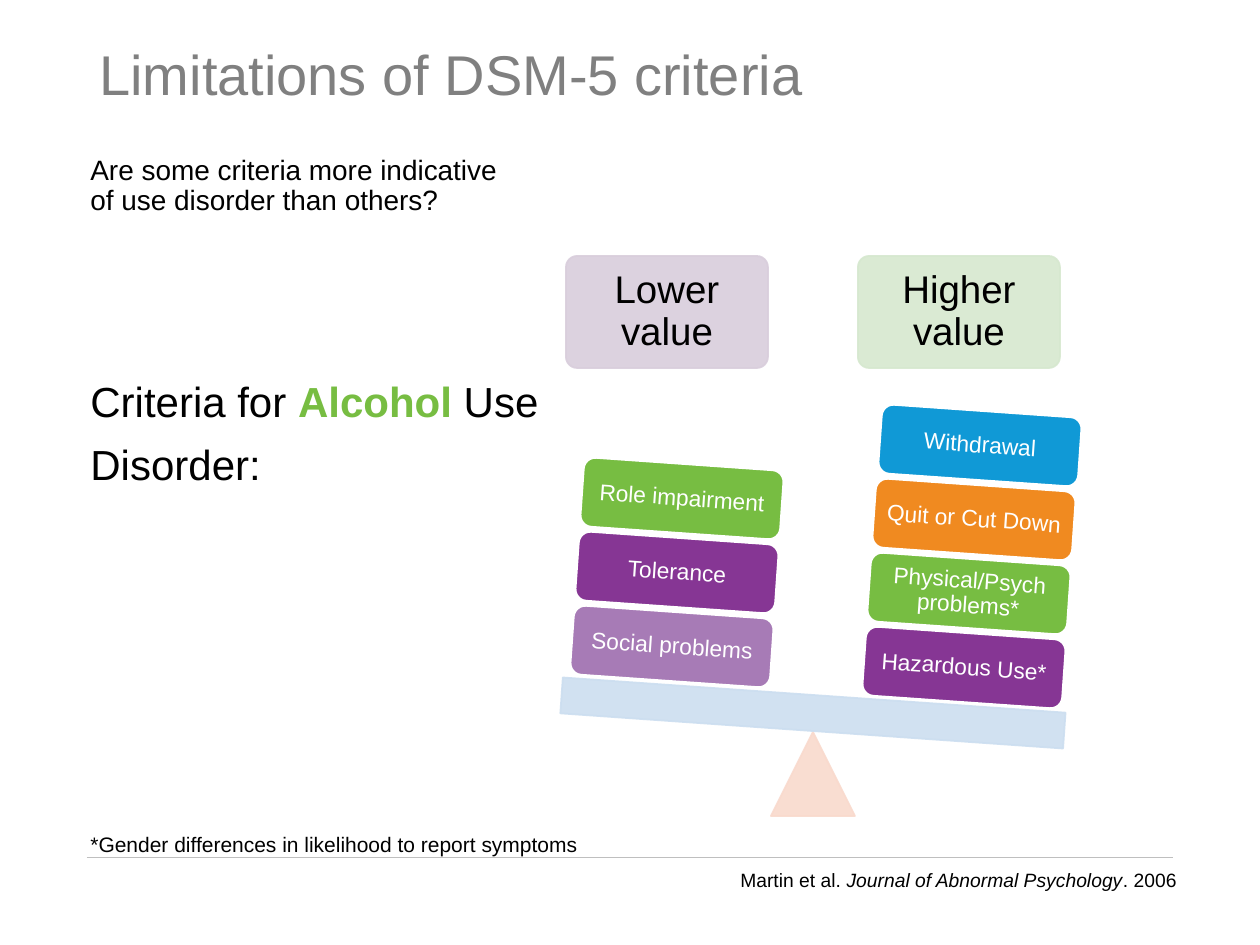
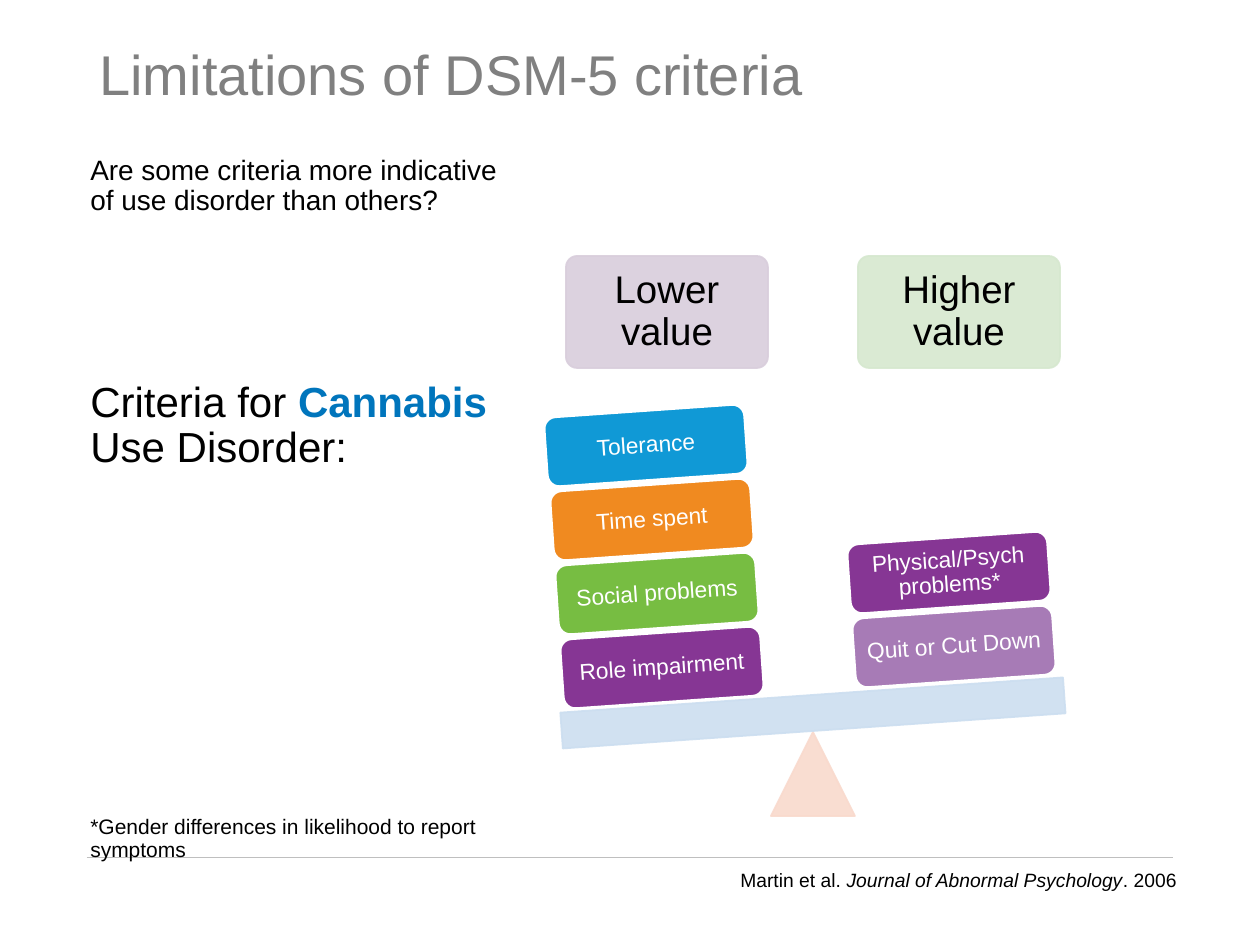
from math import radians, tan

from lxml.etree import SubElement
from pptx import Presentation
from pptx.dml.color import RGBColor
from pptx.enum.shapes import MSO_CONNECTOR, MSO_SHAPE
from pptx.enum.text import MSO_ANCHOR, PP_ALIGN
from pptx.oxml.ns import qn
from pptx.util import Emu, Pt

FONT = "Arial"
BLACK = RGBColor(0x00, 0x00, 0x00)
WHITE = RGBColor(0xFF, 0xFF, 0xFF)
GREY = RGBColor(0x80, 0x80, 0x80)
SILVER = RGBColor(0xBF, 0xBF, 0xBF)
MAUVE = RGBColor(0xA7, 0x7B, 0xB6)
PURPLE = RGBColor(0x86, 0x36, 0x94)
GREEN = RGBColor(0x77, 0xBD, 0x42)
ORANGE = RGBColor(0xF0, 0x8A, 0x20)
SKY = RGBColor(0x10, 0x99, 0xD6)
BLUE = RGBColor(0x00, 0x75, 0xBC)
LILAC = RGBColor(0xD9, 0xCE, 0xDC)
MINT = RGBColor(0xD6, 0xE8, 0xCF)
PEACH = RGBColor(0xF9, 0xDA, 0xCD)
ICE = RGBColor(0xCC, 0xDE, 0xF0)

LIGHT = [MAUVE, PURPLE, GREEN]
HEAVY = [PURPLE, GREEN, ORANGE, SKY]

TILT = 4
PIVOT = 813
BLOCK_W, BLOCK_H, STEP = 200, 69, 74
NOTE = "*Gender differences in likelihood to report symptoms"


def px(count):
    return Emu(round(count * 914400 / 126))


def place(left, top, width, height):
    return px(left), px(top), px(width), px(height)


def add_run(para, text, size, color=BLACK, bold=False, italic=False):
    run = para.add_run()
    run.text = text
    font = run.font
    font.name, font.size = FONT, Pt(size)
    font.bold, font.italic = bold, italic
    font.color.rgb = color


def add_para(frame, runs, before=0, align=PP_ALIGN.LEFT, lines=0.9):
    """Fill the first paragraph if it is still empty, else add one."""
    para = frame.paragraphs[0]
    if para.runs:
        para = frame.add_paragraph()
        para.space_before = Pt(before)
    para.alignment, para.line_spacing = align, lines
    for text, size, *style in runs:
        add_run(para, text, size, *style)


def add_box(slide, box, anchor=MSO_ANCHOR.TOP):
    frame = slide.shapes.add_textbox(*place(*box)).text_frame
    frame.word_wrap = True
    frame.vertical_anchor = anchor
    return frame


def add_form(slide, kind, box, fill, line=None, turn=0):
    form = slide.shapes.add_shape(kind, *place(*box))
    form.shadow.inherit = False
    form.fill.solid()
    form.fill.fore_color.rgb = fill
    form.line.color.rgb = line or fill
    form.line.width = Pt(1)
    form.rotation = turn
    return form


def fade(form):
    """Make fill and line 90% opaque."""
    for color in form._element.spPr.iter(qn("a:srgbClr")):
        SubElement(color, qn("a:alpha"), val="90000")


def label(form, text, size, color, inset):
    frame = form.text_frame
    frame.word_wrap = True
    frame.vertical_anchor = MSO_ANCHOR.MIDDLE
    frame.margin_left = frame.margin_right = px(inset)
    frame.margin_top = frame.margin_bottom = px(inset)
    add_para(frame, [(text, size, color)], align=PP_ALIGN.CENTER)


def add_head(slide, left, text, fill):
    form = add_form(slide, MSO_SHAPE.ROUNDED_RECTANGLE, (left, 256, 202, 112), fill)
    form.adjustments[0] = 0.1
    fade(form)
    label(form, text, 22, BLACK, 11)


def add_pile(slide, names, fills, left, base, side):
    """Stack blocks from the board up; side is 1 if the right end sinks, else -1."""
    for level, (name, fill) in enumerate(zip(names, fills)):
        rise = level * STEP
        x = left + rise * tan(radians(TILT))
        if side < 0:
            x = 2 * PIVOT - x - BLOCK_W
        box = (round(x), base - rise, BLOCK_W, BLOCK_H)
        form = add_form(slide, MSO_SHAPE.ROUNDED_RECTANGLE, box, fill, WHITE, side * TILT)
        label(form, name, 13, WHITE, 6)


def add_scale(slide, light, heavy, side):
    add_head(slide, 566, "Lower value", LILAC)
    add_head(slide, 858, "Higher value", MINT)
    fade(add_form(slide, MSO_SHAPE.ISOSCELES_TRIANGLE, (PIVOT - 42, 732, 84, 84), PEACH))
    board = (PIVOT - 252, 695, 504, 36)
    fade(add_form(slide, MSO_SHAPE.RECTANGLE, board, ICE, turn=side * TILT))
    add_pile(slide, heavy, HEAVY, 864, 633, side)
    add_pile(slide, light, LIGHT, 572, 612, side)


def add_body(slide, width, ask, topic):
    frame = add_box(slide, (78, 150, width, 600))
    for line in ask:
        add_para(frame, [(line, 16)])
    for index, runs in enumerate(topic):
        add_para(frame, runs, 10 if index else 94)
    add_para(frame, [(NOTE, 12)], 197)


def add_base(deck):
    """Add a slide with the shared title, rule and citation."""
    slide = deck.slides.add_slide(deck.slide_layouts[6])
    rule = slide.shapes.add_connector(
        MSO_CONNECTOR.STRAIGHT, px(87), px(857), px(1173), px(857))
    rule.line.color.rgb = SILVER
    rule.line.width = Pt(0.5)
    SubElement(rule._element.spPr, qn("a:effectLst"))
    title = add_box(slide, (87, 0, 1086, 155), MSO_ANCHOR.MIDDLE)
    add_para(title, [("Limitations of DSM-5 criteria", 32, GREY)])
    cite = add_box(slide, (717, 862, 472, 37))
    add_para(cite, [
        ("Martin et al. ", 11),
        ("Journal of Abnormal Psychology", 11, BLACK, False, True),
        (". 2006", 11),
    ], align=PP_ALIGN.RIGHT, lines=1.0)
    return slide


def main():
    deck = Presentation()
    deck.slide_width, deck.slide_height = px(1260), px(945)

    slide = add_base(deck)
    add_body(slide, 662,
             ["Are some criteria more indicative", "of use disorder than others?"],
             [[("Criteria for ", 24), ("Alcohol", 24, GREEN, True), (" Use", 24)],
              [("Disorder:", 24)]])
    add_scale(slide,
              ["Social problems", "Tolerance", "Role impairment"],
              ["Hazardous Use*", "Physical/Psych problems*",
               "Quit or Cut Down", "Withdrawal"], 1)

    slide = add_base(deck)
    add_body(slide, 441,
             ["Are some criteria more indicative of use disorder than others?"],
             [[("Criteria for ", 24), ("Cannabis", 24, BLUE, True),
               (" Use Disorder:", 24)]])
    add_scale(slide,
              ["Quit or Cut Down", "Physical/Psych problems*"],
              ["Role impairment", "Social problems", "Time spent", "Tolerance"], -1)

    deck.save("out.pptx")


if __name__ == "__main__":
    main()
